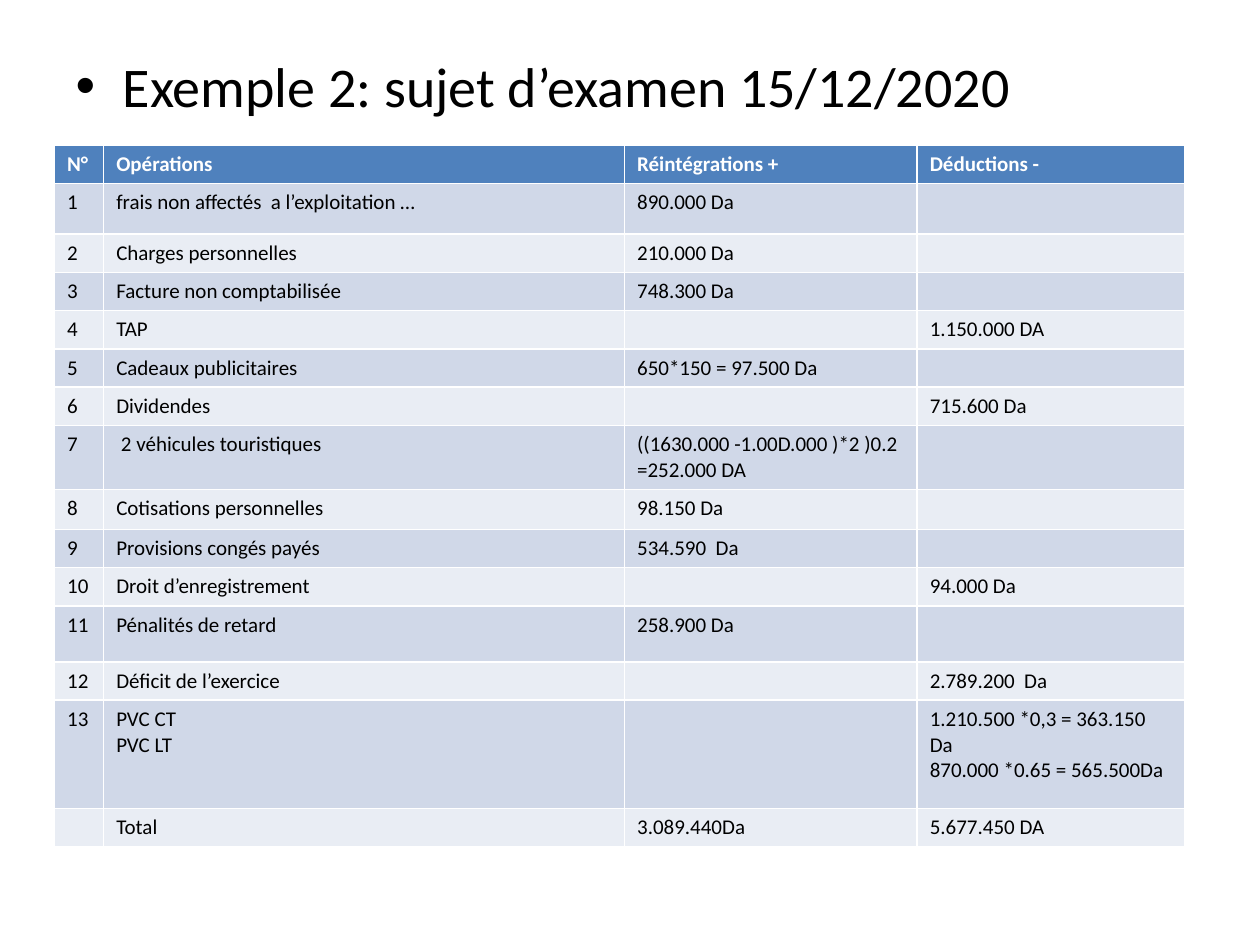
from lxml import etree
from pptx import Presentation, util as u
from pptx.dml.color import RGBColor
from pptx.oxml.ns import qn

HEADING = "Exemple 2: sujet d’examen 15/12/2020"
HEADERS = ("N°", "Opérations", "Réintégrations +", "Déductions -")
OPERATIONS = [
    ("1", "frais non affectés  a l’exploitation …", "890.000 Da", ""),
    ("2", "Charges personnelles", "210.000 Da", ""),
    ("3", "Facture non comptabilisée", "748.300 Da", ""),
    ("4", "TAP", "", "1.150.000 DA"),
    ("5", "Cadeaux publicitaires", "650*150 = 97.500 Da", ""),
    ("6", "Dividendes", "", "715.600 Da"),
    ("7", " 2 véhicules touristiques", "((1630.000 -1.00D.000 )*2 )0.2\n=252.000 DA", ""),
    ("8", "Cotisations personnelles", "98.150 Da", ""),
    ("9", "Provisions congés payés", "534.590  Da", ""),
    ("10", "Droit d’enregistrement", "", "94.000 Da"),
    ("11", "Pénalités de retard", "258.900 Da", ""),
    ("12", "Déficit de l’exercice", "", "2.789.200  Da"),
    ("13", "PVC CT\nPVC LT", "", "1.210.500 *0,3 = 363.150 Da\n870.000 *0.65 = 565.500Da"),
    ("", "Total", "3.089.440Da", "5.677.450 DA"),
]
COLORS = {"header": "4F81BD", "odd": "D0D8E8", "even": "E9EDF4", "light": "FFFFFF", "dark": "000000"}
FONT = "Calibri"
COLUMN_WIDTHS = (0.99, 10.5, 5.9, 5.4)
ROW_HEIGHT = 0.75
TALL_ROWS = {1: 1.02, 7: 1.25, 8: 0.81, 11: 1.13, 13: 2.18}


def style(paragraph, size, color, bold=False):
    font = paragraph.font
    font.name, font.size, font.bold = FONT, u.Pt(size), bold
    font.color.rgb = RGBColor.from_string(COLORS[color])


def fill_cell(cell, content, fill, color, bold):
    cell.fill.solid()
    cell.fill.fore_color.rgb = RGBColor.from_string(COLORS[fill])
    cell.text = content
    for paragraph in cell.text_frame.paragraphs:
        style(paragraph, 12, color, bold)
        if not content:
            etree.SubElement(paragraph._p, qn("a:endParaRPr"), sz="1200")


def add_heading(slide):
    title, heading = slide.placeholders
    title.element.getparent().remove(title.element)
    heading.left, heading.top = u.Cm(1.27), u.Cm(0.91)
    heading.width, heading.height = u.Cm(22.86), u.Cm(16.1)
    heading.text_frame.text = HEADING
    paragraph = heading.text_frame.paragraphs[0]
    paragraph.space_before = u.Pt(0)
    style(paragraph, 32, "dark")


def add_operations(slide):
    rows = [HEADERS, *OPERATIONS]
    heights = [TALL_ROWS.get(i, ROW_HEIGHT) for i in range(len(rows))]
    operations = slide.shapes.add_table(
        len(rows), len(HEADERS), u.Cm(1.1), u.Cm(2.93),
        u.Cm(sum(COLUMN_WIDTHS)), u.Cm(sum(heights))).table
    for column, width in zip(operations.columns, COLUMN_WIDTHS):
        column.width = u.Cm(width)
    for i, (entries, height) in enumerate(zip(rows, heights)):
        operations.rows[i].height = u.Cm(height)
        is_header = i == 0
        fill = "header" if is_header else "odd" if i % 2 else "even"
        color = "light" if is_header else "dark"
        for j, content in enumerate(entries):
            fill_cell(operations.cell(i, j), content, fill, color, is_header)


def main():
    deck = Presentation()
    deck.slide_width, deck.slide_height = u.Cm(25.4), u.Cm(19.05)
    slide = deck.slides.add_slide(deck.slide_layouts[1])
    add_heading(slide)
    add_operations(slide)
    deck.save("out.pptx")


if __name__ == "__main__":
    main()
